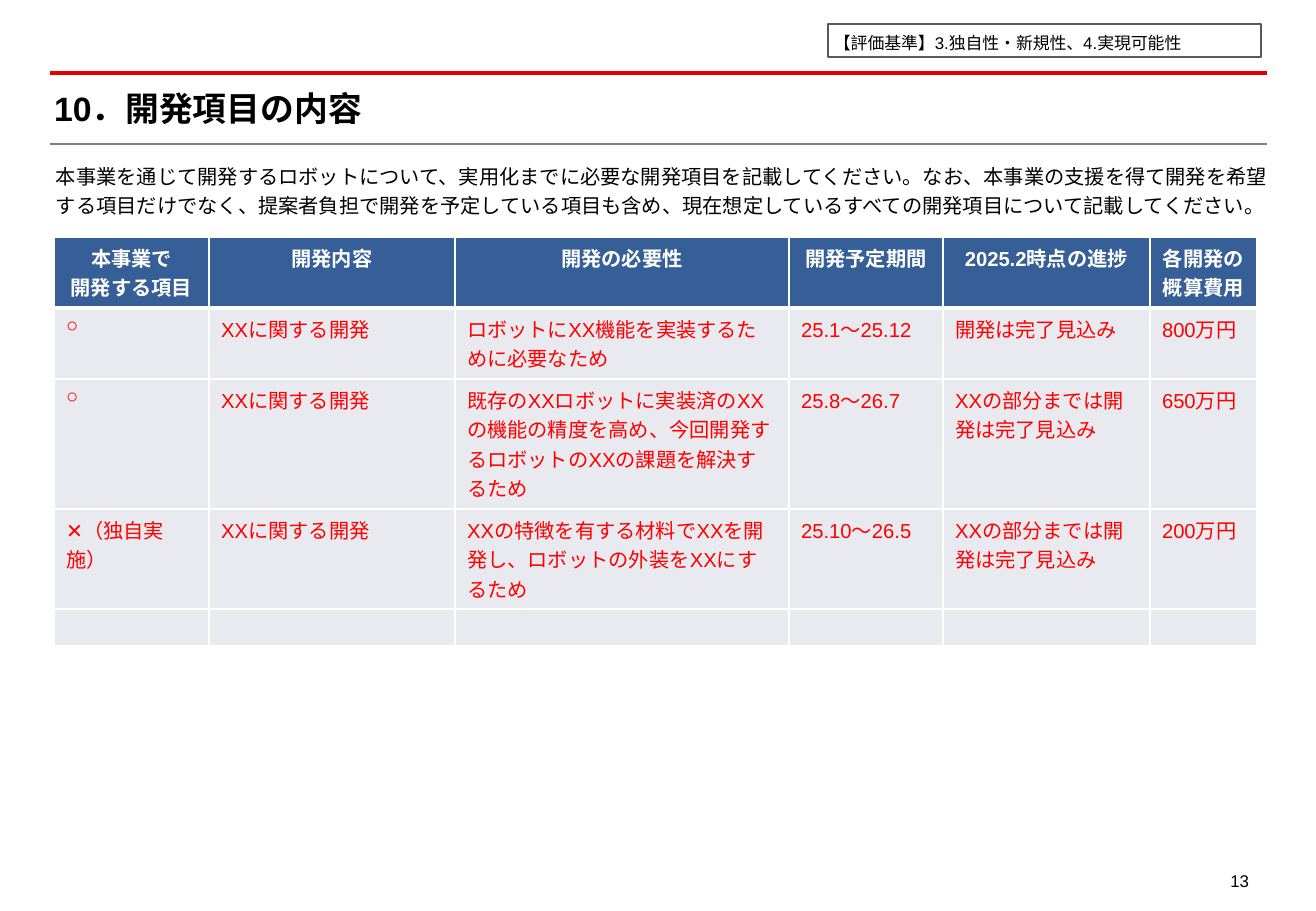
from dataclasses import dataclass

from lxml import etree
from pptx import Presentation
from pptx.dml.color import RGBColor
from pptx.enum.shapes import MSO_CONNECTOR, MSO_SHAPE
from pptx.enum.text import MSO_ANCHOR, PP_ALIGN
from pptx.oxml.ns import qn
from pptx.util import Pt

STRAIGHT = MSO_CONNECTOR.STRAIGHT
RECTANGLE = MSO_SHAPE.RECTANGLE
TOP, MIDDLE = MSO_ANCHOR.TOP, MSO_ANCHOR.MIDDLE
LEFT, CENTER, RIGHT = PP_ALIGN.LEFT, PP_ALIGN.CENTER, PP_ALIGN.RIGHT
EMU_PER_PX = 7526


@dataclass(frozen=True)
class Theme:
    font: str = "Arial"
    title_size: int = 20
    body_size: int = 12
    small_size: int = 10
    text: str = "000000"
    accent: str = "E60000"
    rule: str = "808080"
    box_line: str = "595959"
    header_fill: str = "365F97"
    body_fill: str = "E8EAEF"
    white: str = "FFFFFF"
    example: str = "FF0000"


THEME = Theme()
TITLE = "10．開発項目の内容"
CRITERIA = "【評価基準】3.独自性・新規性、4.実現可能性"
INTRO = (
    "本事業を通じて開発するロボットについて、実用化までに必要な開発項目を記載してください。"
    "なお、本事業の支援を得て開発を希望する項目だけでなく、提案者負担で開発を予定している項目も含め、"
    "現在想定しているすべての開発項目について記載してください。"
)
COLUMN_WIDTHS = [155, 246, 334, 154, 207, 107]
ROW_HEIGHTS = [71, 71, 130, 100, 37]
ITEMS = [
    ["本事業で\n開発する項目", "開発内容", "開発の必要性", "開発予定期間", "2025.2時点の進捗", "各開発の概算費用"],
    ["○", "XXに関する開発", "ロボットにXX機能を実装するために必要なため", "25.1～25.12", "開発は完了見込み", "800万円"],
    ["○", "XXに関する開発",
     "既存のXXロボットに実装済のXXの機能の精度を高め、今回開発するロボットのXXの課題を解決するため",
     "25.8～26.7", "XXの部分までは開発は完了見込み", "650万円"],
    ["✕（独自実施）", "XXに関する開発",
     "XXの特徴を有する材料でXXを開発し、ロボットの外装をXXにするため",
     "25.10～26.5", "XXの部分までは開発は完了見込み", "200万円"],
    [""] * len(COLUMN_WIDTHS),
]


def px(length):
    return length * EMU_PER_PX


def color(value):
    return RGBColor.from_string(value)


def write(frame, text, size, text_color=THEME.text, bold=False, align=LEFT, spacing=1.2):
    frame.text = text
    for paragraph in frame.paragraphs:
        paragraph.alignment = align
        paragraph.line_spacing = spacing
        paragraph.font.name = THEME.font
        paragraph.font.size = Pt(size)
        paragraph.font.bold = bold
        paragraph.font.color.rgb = color(text_color)


def set_frame(frame, anchor=TOP, left=0, right=0, vertical=0):
    frame.word_wrap = True
    frame.vertical_anchor = anchor
    frame.margin_left, frame.margin_right = px(left), px(right)
    frame.margin_top = frame.margin_bottom = px(vertical)


def add_text(slide, box, text, size, anchor=TOP, **style):
    frame = slide.shapes.add_textbox(*map(px, box)).text_frame
    set_frame(frame, anchor)
    write(frame, text, size, **style)


def add_rule(slide, left, top, width, line_color, weight):
    rule = slide.shapes.add_connector(STRAIGHT, px(left), px(top), px(left + width), px(top))
    rule.line.color.rgb = color(line_color)
    rule.line.width = Pt(weight)
    etree.SubElement(rule._element.spPr, qn("a:effectLst"))


def add_heading(slide, left, top, width, height):
    add_rule(slide, left, top, width, THEME.accent, 2)
    add_rule(slide, left, top + height, width, THEME.rule, 1.25)
    add_text(slide, (left + 4, top + 14, width - 14, 41), TITLE, THEME.title_size,
             anchor=MIDDLE, bold=True, spacing=1.0)


def add_criteria(slide, left, top, width, height):
    shape = slide.shapes.add_shape(RECTANGLE, *map(px, (left, top, width, height)))
    shape.shadow.inherit = False
    shape.fill.background()
    shape.line.color.rgb = color(THEME.box_line)
    shape.line.width = Pt(1)
    set_frame(shape.text_frame, MIDDLE, left=6, right=2, vertical=2)
    write(shape.text_frame, CRITERIA, THEME.small_size)


def set_borders(cell, bottom_weight):
    properties = cell._tc.get_or_add_tcPr()
    weights = {"lnL": 1, "lnR": 1, "lnT": 1, "lnB": bottom_weight}
    for position, (side, weight) in enumerate(weights.items()):
        line = etree.Element(qn(f"a:{side}"), w=str(Pt(weight)))
        fill = etree.SubElement(line, qn("a:solidFill"))
        etree.SubElement(fill, qn("a:srgbClr"), val=THEME.white)
        properties.insert(position, line)


def add_items_table(slide, left, top):
    box = (left, top, sum(COLUMN_WIDTHS), sum(ROW_HEIGHTS))
    table = slide.shapes.add_table(len(ROW_HEIGHTS), len(COLUMN_WIDTHS), *map(px, box)).table
    table.horz_banding = False
    for column, width in zip(table.columns, COLUMN_WIDTHS):
        column.width = px(width)
    for index, (row, height, texts) in enumerate(zip(table.rows, ROW_HEIGHTS, ITEMS)):
        row.height = px(height)
        header = index == 0
        for cell, text in zip(row.cells, texts):
            cell.fill.solid()
            cell.fill.fore_color.rgb = color(THEME.header_fill if header else THEME.body_fill)
            set_borders(cell, 3 if header else 1)
            write(cell.text_frame, text, THEME.body_size,
                  text_color=THEME.white if header else THEME.example, bold=header,
                  align=CENTER if header else LEFT, spacing=1.0)


def build_slide(presentation):
    slide = presentation.slides.add_slide(presentation.slide_layouts[6])
    add_heading(slide, 50, 73, 1217, 71)
    add_criteria(slide, 828, 24, 433, 33)
    add_text(slide, (56, 159, 1221, 56), INTRO, THEME.body_size)
    add_items_table(slide, 54, 237)
    add_text(slide, (1207, 867, 42, 28), "13", THEME.small_size, align=RIGHT)


def main():
    presentation = Presentation()
    presentation.slide_width, presentation.slide_height = px(1316), px(911)
    build_slide(presentation)
    presentation.save("out.pptx")


if __name__ == "__main__":
    main()
